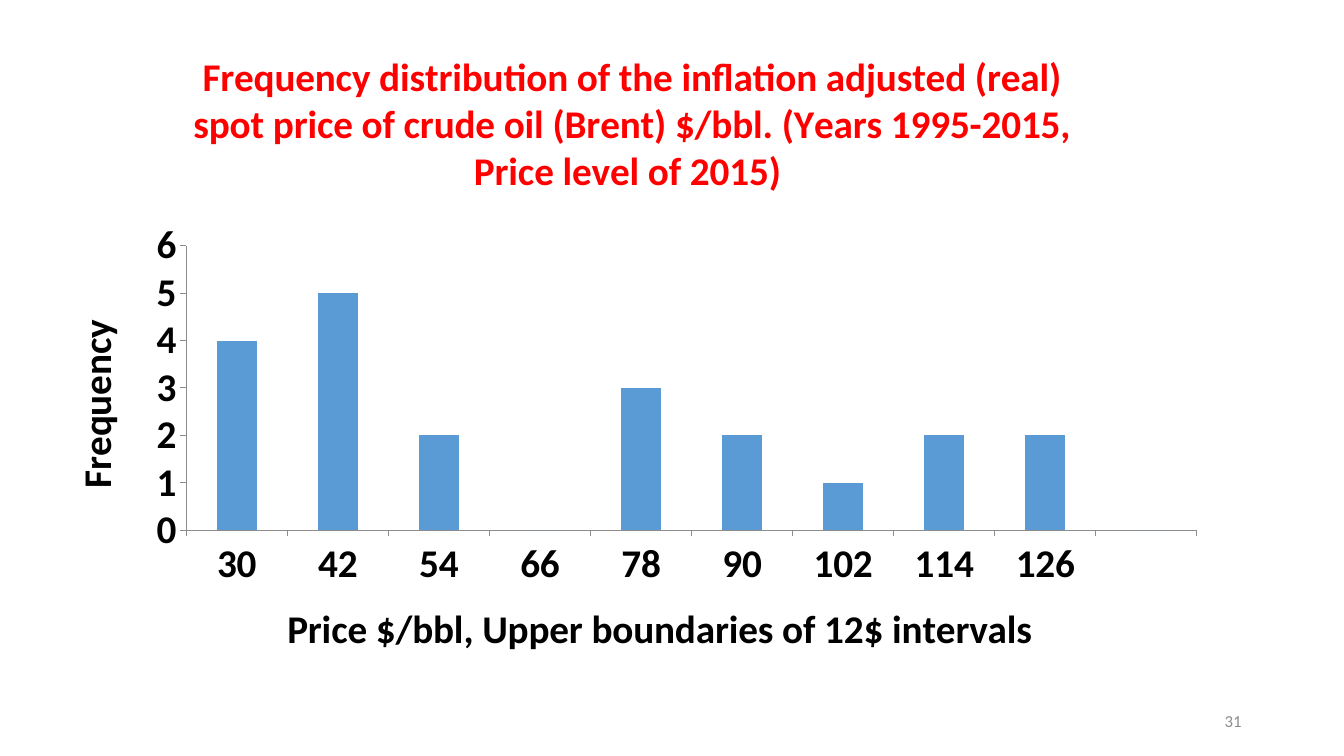
from dataclasses import dataclass
from lxml import etree
from pptx import Presentation
from pptx.chart.data import CategoryChartData
from pptx.dml.color import RGBColor
from pptx.enum.chart import XL_CHART_TYPE, XL_TICK_MARK
from pptx.enum.text import MSO_ANCHOR, PP_ALIGN
from pptx.oxml.ns import qn
from pptx.util import Pt


@dataclass
class Theme:
    font: str = "Calibri"
    title: RGBColor = RGBColor(0xFF, 0, 0)
    text: RGBColor = RGBColor(0, 0, 0)
    bar: RGBColor = RGBColor(0x5B, 0x9B, 0xD5)
    axis: RGBColor = RGBColor(0x8C, 0x8C, 0x8C)
    large: Pt = Pt(28)
    base: Pt = Pt(10)
    small: Pt = Pt(12)


theme = Theme()
chart_w, chart_h = Pt(839.5), Pt(499.7)


def style(font, size, color, bold=False):
    font.name = theme.font
    font.size = size
    font.bold = bold
    font.color.rgb = color


def place(parent, index, x, y, w=None, h=None):
    for old in parent.findall(qn("c:layout")):
        parent.remove(old)
    layout = {"xMode": "edge", "yMode": "edge", "x": x / chart_w, "y": y / chart_h}
    if w:
        layout = {"layoutTarget": "inner", **layout, "w": w / chart_w, "h": h / chart_h}
    outer = etree.Element(qn("c:layout"))
    manual = etree.SubElement(outer, qn("c:manualLayout"))
    for tag, val in layout.items():
        etree.SubElement(manual, qn(f"c:{tag}")).set("val", str(val))
    parent.insert(index, outer)


prs = Presentation()
prs.slide_width, prs.slide_height = Pt(960), Pt(540)
s = prs.slides.add_slide(prs.slide_layouts[6])

data = CategoryChartData()
data.categories = [str(bound) for bound in range(30, 127, 12)] + [""]
data.add_series("Series 1", (4, 5, 2, 0, 3, 2, 1, 2, 2, 0))
chart = s.shapes.add_chart(
    XL_CHART_TYPE.COLUMN_CLUSTERED, Pt(31.7), Pt(16.6), chart_w, chart_h, data
).chart
chart.has_legend = False
style(chart.font, theme.base, theme.text)

plot = chart.plots[0]
plot.gap_width = 150
plot.vary_by_categories = False
fill = plot.series[0].format.fill
fill.solid()
fill.fore_color.rgb = theme.bar

cat, val = chart.category_axis, chart.value_axis
for axis in (cat, val):
    axis.has_major_gridlines = False
    axis.major_tick_mark = XL_TICK_MARK.OUTSIDE
    axis.minor_tick_mark = XL_TICK_MARK.NONE
    axis.format.line.color.rgb = theme.axis
    axis.format.line.width = Pt(0.75)
    style(axis.tick_labels.font, theme.large, theme.text, True)
val.minimum_scale, val.maximum_scale, val.major_unit = 0, 6, 1

heading = (
    "Frequency distribution of the inflation adjusted (real) spot price of "
    "crude oil (Brent) $/bbl. (Years 1995-2015, Price level of 2015) "
)
titles = (
    (chart.chart_title, heading, theme.title, Pt(101.4), Pt(13.9)),
    (cat.axis_title, "Price $/bbl, Upper boundaries of 12$ intervals", theme.text, Pt(168.5), Pt(408.7)),
    (val.axis_title, "Frequency", theme.text, Pt(13), Pt(207)),
)
for title, text, color, x, y in titles:
    p = title.text_frame.paragraphs[0]
    r = p.add_run()
    r.text = text
    style(r.font, theme.large, color, True)
    place(title._element, 1, x, y)
val.axis_title.text_frame._txBody.find(qn("a:bodyPr")).set("rot", "-5400000")
place(chart._chartSpace.chart.plotArea, 0, Pt(101.3), Pt(158.9), Pt(722), Pt(203.4))

sp = s.shapes.add_textbox(Pt(678), Pt(500.5), Pt(216), Pt(28.8))
tf = sp.text_frame
tf.word_wrap = True
tf.vertical_anchor = MSO_ANCHOR.MIDDLE
p = tf.paragraphs[0]
p.alignment = PP_ALIGN.RIGHT
r = p.add_run()
r.text = "31"
style(r.font, theme.small, theme.axis)

prs.save("out.pptx")
